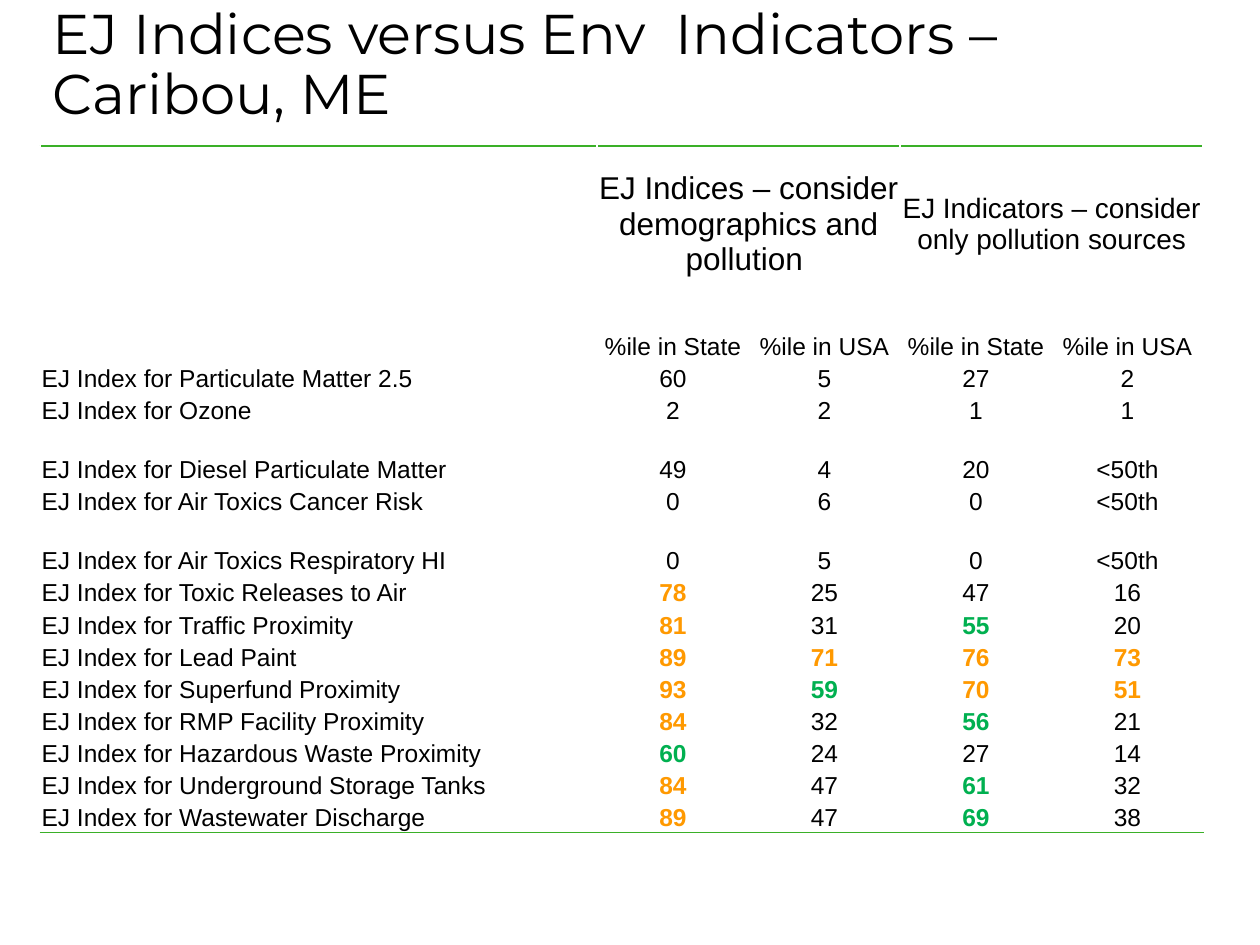
from dataclasses import dataclass

from lxml import etree
from pptx import Presentation
from pptx.dml.color import RGBColor
from pptx.enum.text import MSO_ANCHOR, MSO_AUTO_SIZE, PP_ALIGN
from pptx.oxml.ns import qn
from pptx.table import Table, _Cell
from pptx.text.text import TextFrame
from pptx.util import Inches, Pt

LEFT, CENTER = PP_ALIGN.LEFT, PP_ALIGN.CENTER
MIDDLE, BOTTOM = MSO_ANCHOR.MIDDLE, MSO_ANCHOR.BOTTOM
NO_AUTOFIT = MSO_AUTO_SIZE.NONE

BLACK = RGBColor(0x00, 0x00, 0x00)
ORANGE = RGBColor(0xFF, 0x99, 0x00)
GREEN = RGBColor(0x00, 0xB0, 0x50)
RULE_GREEN = RGBColor(0x3A, 0xB0, 0x28)
TONES = {".": BLACK, "o": ORANGE, "g": GREEN}

TITLE_ONLY = 5
TABLE_WIDTH, TABLE_HEIGHT = 9.23, 5.45
NAME_WIDTH = 4.42
HEADING_HEIGHT, TALL_HEIGHT = 1.23, 0.47


@dataclass(frozen=True)
class Heading:
    text: str
    column: int
    size: int


@dataclass(frozen=True)
class IndexRow:
    name: str
    values: tuple[str, str, str, str]
    tones: str = "...."
    tall: bool = False


HEADINGS = (
    Heading("EJ Indices – consider demographics and pollution ", 1, 18),
    Heading("EJ Indicators – consider only pollution sources", 3, 16),
)
ROWS = (
    IndexRow("", ("%ile in State", "%ile in USA") * 2, tall=True),
    IndexRow("Particulate Matter 2.5", ("60", "5", "27", "2")),
    IndexRow("Ozone", ("2", "2", "1", "1")),
    IndexRow("Diesel Particulate Matter", ("49", "4", "20", "<50th"), tall=True),
    IndexRow("Air Toxics Cancer Risk", ("0", "6", "0", "<50th")),
    IndexRow("Air Toxics Respiratory HI", ("0", "5", "0", "<50th"), tall=True),
    IndexRow("Toxic Releases to Air", ("78", "25", "47", "16"), "o..."),
    IndexRow("Traffic Proximity", ("81", "31", "55", "20"), "o.g."),
    IndexRow("Lead Paint", ("89", "71", "76", "73"), "oooo"),
    IndexRow("Superfund Proximity", ("93", "59", "70", "51"), "ogoo"),
    IndexRow("RMP Facility Proximity", ("84", "32", "56", "21"), "o.g."),
    IndexRow("Hazardous Waste Proximity", ("60", "24", "27", "14"), "g..."),
    IndexRow("Underground Storage Tanks", ("84", "47", "61", "32"), "o.g."),
    IndexRow("Wastewater Discharge", ("89", "47", "69", "38"), "o.g."),
)


def write_text(
    frame: TextFrame,
    text: str,
    *,
    size: int = 14,
    font: str = "Arial",
    color: RGBColor = BLACK,
    bold: bool = False,
    align: PP_ALIGN = CENTER,
    spacing: float = 1.0,
) -> None:
    paragraph = frame.paragraphs[0]
    paragraph.alignment = align
    paragraph.line_spacing = spacing
    run = paragraph.add_run()
    run.text = text
    run.font.size = Pt(size)
    run.font.name = font
    run.font.bold = bold
    run.font.color.rgb = color


def prepare_cell(cell: _Cell, anchor: MSO_ANCHOR) -> None:
    cell.fill.background()
    cell.vertical_anchor = anchor
    cell.margin_left = cell.margin_right = cell.margin_top = Inches(0.01)
    cell.margin_bottom = 0


def add_border(cell: _Cell, side: str) -> None:
    properties = cell._tc.get_or_add_tcPr()
    line = etree.Element(qn(f"a:{side}"), w=str(Pt(1)))
    fill = etree.SubElement(line, qn("a:solidFill"))
    etree.SubElement(fill, qn("a:srgbClr"), val=str(RULE_GREEN))
    properties.insert(0, line)


def size_table(table: Table) -> None:
    value_width = (TABLE_WIDTH - NAME_WIDTH) / 4
    for index, column in enumerate(table.columns):
        column.width = Inches(value_width if index else NAME_WIDTH)

    tall_count = sum(row.tall for row in ROWS)
    short_total = TABLE_HEIGHT - HEADING_HEIGHT - tall_count * TALL_HEIGHT
    short_height = short_total / (len(ROWS) - tall_count)
    table.rows[0].height = Inches(HEADING_HEIGHT)
    for index, row in enumerate(ROWS, start=1):
        table.rows[index].height = Inches(TALL_HEIGHT if row.tall else short_height)


def fill_row(table: Table, index: int, row: IndexRow) -> None:
    if row.name:
        write_text(
            table.cell(index, 0).text_frame, f"EJ Index for {row.name}", align=LEFT
        )
    for column, (value, tone) in enumerate(zip(row.values, row.tones), start=1):
        write_text(
            table.cell(index, column).text_frame,
            value,
            color=TONES[tone],
            bold=tone != ".",
        )


def main() -> None:
    presentation = Presentation()
    presentation.slide_width = Inches(10)
    presentation.slide_height = Inches(7.5)
    slide = presentation.slides.add_slide(presentation.slide_layouts[TITLE_ONLY])

    title = slide.shapes.title
    title.left, title.top = Inches(0.32), Inches(-0.2)
    title.width, title.height = Inches(9.62), Inches(1.45)
    title.text_frame.auto_size = NO_AUTOFIT
    title.text_frame.word_wrap = True
    title.text_frame.vertical_anchor = MIDDLE
    write_text(
        title.text_frame,
        "EJ Indices versus Env  Indicators – Caribou, ME",
        size=32,
        font="Montserrat",
        align=LEFT,
        spacing=0.9,
    )

    table = slide.shapes.add_table(
        len(ROWS) + 1,
        5,
        Inches(0.32),
        Inches(1.16),
        Inches(TABLE_WIDTH),
        Inches(TABLE_HEIGHT),
    ).table
    table.first_row = False
    table.horz_banding = False
    size_table(table)

    for index in range(len(ROWS) + 1):
        for column in range(5):
            prepare_cell(table.cell(index, column), BOTTOM if index else MIDDLE)
    for column in range(5):
        add_border(table.cell(0, column), "lnT")
        add_border(table.cell(len(ROWS), column), "lnB")

    for heading in HEADINGS:
        cell = table.cell(0, heading.column)
        cell.merge(table.cell(0, heading.column + 1))
        write_text(cell.text_frame, heading.text, size=heading.size)
    for index, row in enumerate(ROWS, start=1):
        fill_row(table, index, row)

    presentation.save("out.pptx")


if __name__ == "__main__":
    main()
